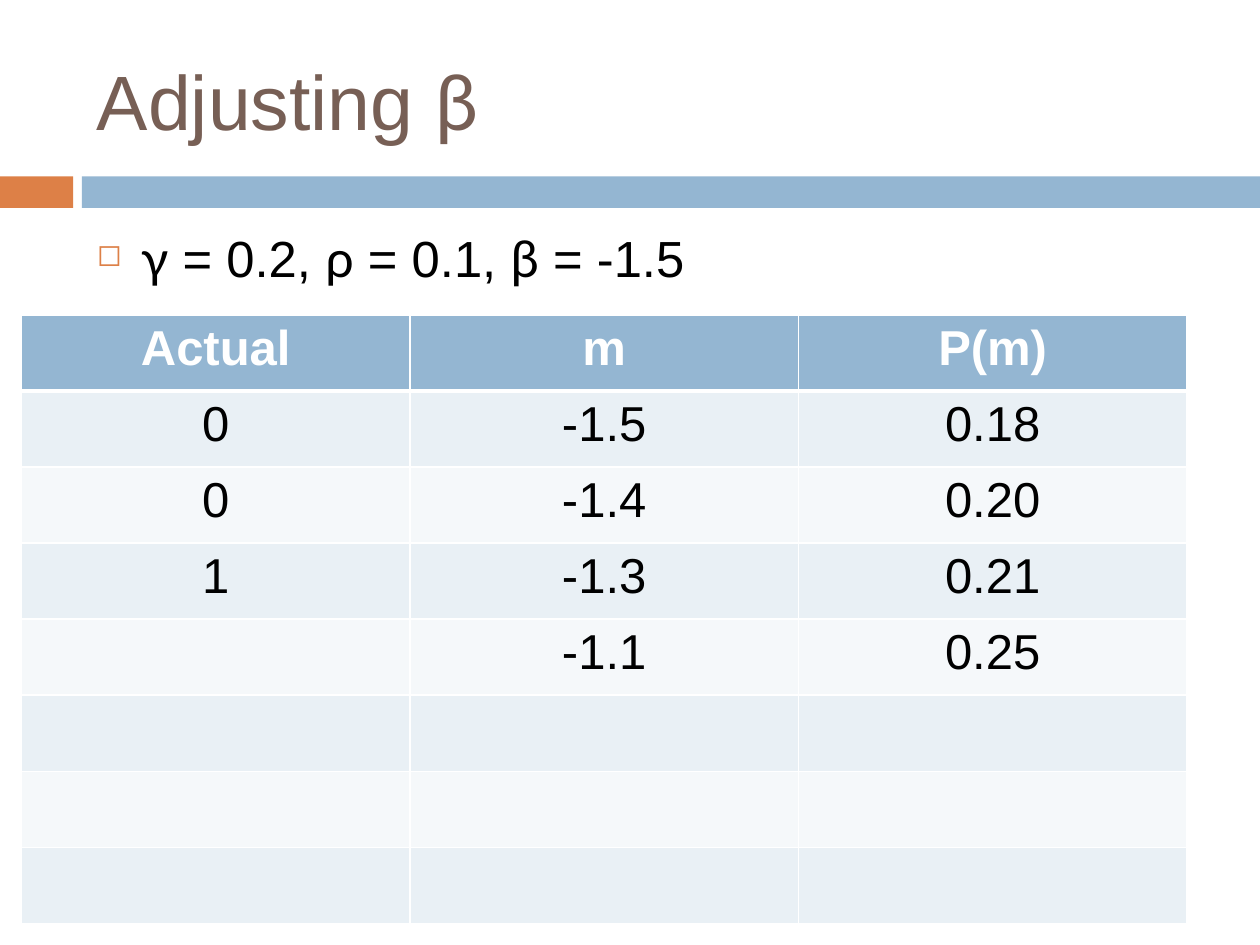
"""Build the "Adjusting β" slide with its parameter line and table."""
from lxml.etree import SubElement
from pptx import Presentation
from pptx.dml.color import RGBColor as Color
from pptx.enum.shapes import MSO_SHAPE as Shape
from pptx.enum.text import MSO_ANCHOR as Anchor, PP_ALIGN as Align
from pptx.oxml.ns import qn
from pptx.util import Inches, Pt

COLORS = {"orange": "DD8047", "blue": "94B6D2", "brown": "775F55", "black": "000000",
          "white": "FFFFFF", "odd": "E9F0F5", "even": "F5F8FA"}
LATIN, GREEK = "Arial", "Lato"
TITLE = [("Adjusting ", LATIN), ("β", GREEK)]
PARAMETERS = [("γ", GREEK), (" = 0.2, ", LATIN), ("ρ", GREEK), (" = 0.1, ", LATIN),
              ("β", GREEK), (" = -1.5 ", LATIN)]
BARS = [("orange", 0, 0.58), ("blue", 0.65, 9.35)]
ROWS = [("Actual", "m", "P(m)"),
        ("0", "-1.5", "0.18"),
        ("0", "-1.4", "0.20"),
        ("1", "-1.3", "0.21"),
        ("", "-1.1", "0.25"),
        *[("", "", "")] * 3]
TABLE_AREA = (0.17, 2.5, 9.25, 4.83)


def color(name):
    return Color.from_string(COLORS[name])


def add_span(para, text, tone, **formats):
    span = para.add_run()
    span.text = text
    for key, value in formats.items():
        setattr(span.font, key, value)
    span.font.color.rgb = color(tone)


def add_line(page, area, spans, size, tone, anchor):
    frame = page.shapes.add_textbox(*map(Inches, area)).text_frame
    for key, value in {"word_wrap": True, "vertical_anchor": anchor}.items():
        setattr(frame, key, value)
    para = frame.paragraphs[0]
    for text, font in spans:
        add_span(para, text, tone, size=Pt(size), name=font)
    return para


def add_bullet(para, mark, tone, percent, indent):
    props = para._p.get_or_add_pPr()
    props.set("marL", str(Inches(indent)))
    props.set("indent", str(-Inches(indent)))
    SubElement(SubElement(props, qn("a:buClr")), qn("a:srgbClr"), val=COLORS[tone])
    SubElement(props, qn("a:buSzPct"), val=str(percent * 1000))
    SubElement(props, qn("a:buChar"), char=mark)


def add_borders(cell, tone, widths):
    props = cell._tc.get_or_add_tcPr()
    for side, width in widths.items():
        line = SubElement(props, qn(f"a:ln{side}"), w=str(Pt(width)))
        SubElement(SubElement(line, qn("a:solidFill")), qn("a:srgbClr"), val=COLORS[tone])


deck = Presentation()
deck.slide_width, deck.slide_height = Inches(10), Inches(7.5)
page = deck.slides.add_slide(deck.slide_layouts[6])

for tone, left, width in BARS:
    bar = page.shapes.add_shape(Shape.RECTANGLE, *map(Inches, (left, 1.4, width, 0.25)))
    bar.shadow.inherit = False
    bar.fill.solid()
    bar.fill.fore_color.rgb = color(tone)
    bar.line.fill.background()

add_line(page, (0.67, 0.25, 8.92, 1.08), TITLE, 44, "brown", Anchor.MIDDLE)
parameters = add_line(page, (0.67, 1.75, 8.92, 0.7), PARAMETERS, 29, "black", Anchor.TOP)
add_bullet(parameters, "◻", "orange", 60, 0.35)

table = page.shapes.add_table(len(ROWS), len(ROWS[0]), *map(Inches, TABLE_AREA)).table
for r, row in enumerate(ROWS):
    header = r == 0
    fill = "blue" if header else "odd" if r % 2 else "even"
    widths = {"L": 1, "R": 1, "T": 3 if r == 1 else 1, "B": 3 if header else 1}
    for c, text in enumerate(row):
        cell = table.cell(r, c)
        add_borders(cell, "white", widths)
        cell.fill.solid()
        cell.fill.fore_color.rgb = color(fill)
        para = cell.text_frame.paragraphs[0]
        para.alignment = Align.CENTER
        if text:
            add_span(para, text, "white" if header else "black",
                     size=Pt(28), name=LATIN, bold=header)

deck.save("out.pptx")
